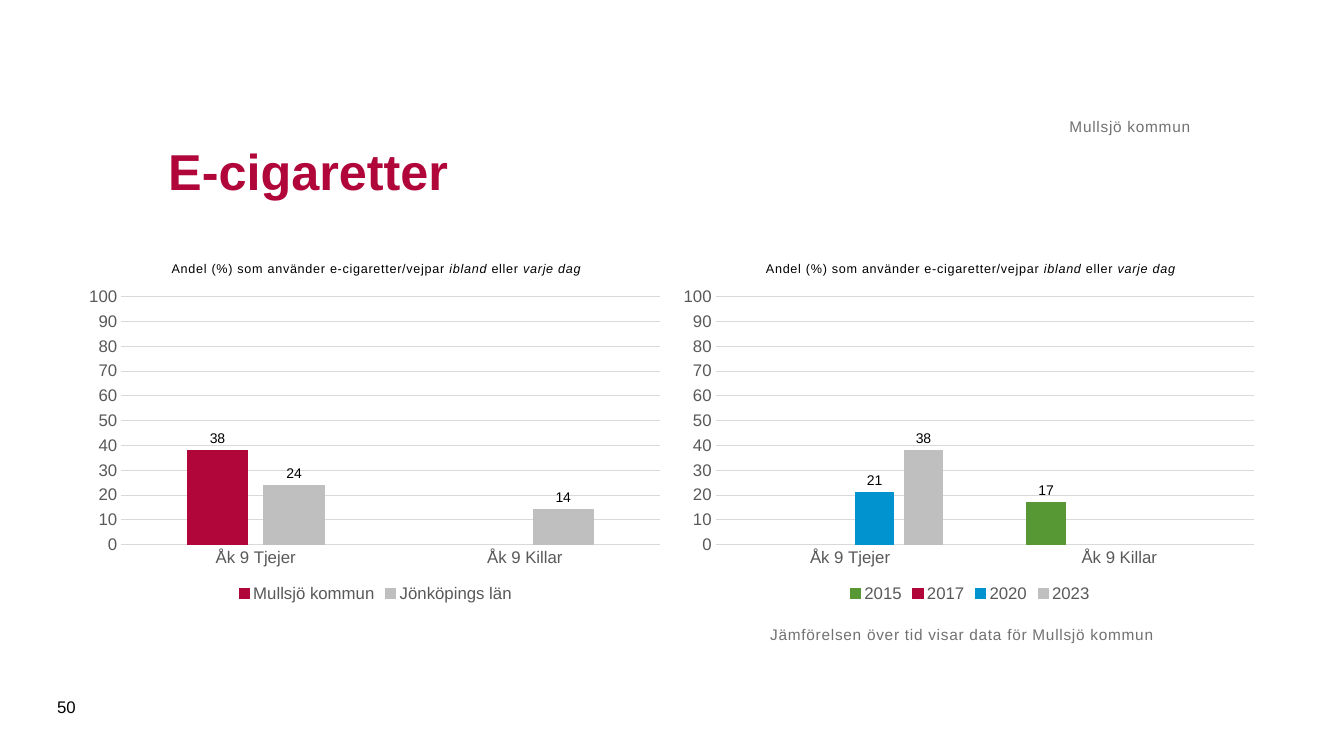
from dataclasses import dataclass, field
from typing import Any, Optional

from lxml.etree import SubElement
from pptx import Presentation
from pptx.chart.data import CategoryChartData as ChartData
from pptx.dml.color import RGBColor as Rgb
from pptx.enum.chart import XL_CHART_TYPE as ChartType
from pptx.enum.chart import XL_LABEL_POSITION as LabelPosition
from pptx.enum.chart import XL_LEGEND_POSITION as LegendPosition
from pptx.enum.chart import XL_TICK_MARK as TickMark
from pptx.enum.text import MSO_ANCHOR as Anchor
from pptx.enum.text import PP_ALIGN as Align
from pptx.oxml.ns import qn
from pptx.util import Cm, Pt


@dataclass(frozen=True)
class Theme:
    font: str = "Arial"
    black: str = "000000"
    crimson: str = "B1063A"
    silver: str = "BFBFBF"
    green: str = "579835"
    blue: str = "0093D0"
    axis_text: str = "595959"
    note_text: str = "717171"
    grid: str = "D9D9D9"
    heading_size: float = 36
    axis_size: float = 12
    note_size: float = 11
    value_size: float = 10
    question_size: float = 9
    spacing: str = "50"
    hairline: float = 0.75


@dataclass(frozen=True)
class Group:
    name: str
    shares: tuple[Optional[int], ...]
    color: str


@dataclass(frozen=True)
class Comparison:
    left: float
    groups: tuple[Group, ...]


@dataclass(frozen=True)
class Caption:
    text: str
    box: tuple[float, float, float, float]
    style: dict[str, Any] = field(default_factory=dict)


THEME = Theme()
PERCENT = "#,##0;#,##0"
GRADES = ("Åk 9 Tjejer", "Åk 9 Killar")
QUESTION = (
    ("Andel (%) som använder e-cigaretter/vejpar ", False),
    ("ibland", True),
    (" eller ", False),
    ("varje dag", True),
)
COMPARISONS = (
    Comparison(2.01, (
        Group("Mullsjö kommun", (38, None), THEME.crimson),
        Group("Jönköpings län", (24, 14), THEME.silver),
    )),
    Comparison(16.99, (
        Group("2015", (None, 17), THEME.green),
        Group("2017", (None, None), THEME.crimson),
        Group("2020", (21, None), THEME.blue),
        Group("2023", (38, None), THEME.silver),
    )),
)
NOTE = dict(size=THEME.note_size, color=THEME.note_text, spacing=THEME.spacing, flush=True)
CAPTIONS = (
    Caption("E-cigaretter", (3.99, 2.49, 26.01, 3.61),
            dict(size=THEME.heading_size, color=THEME.crimson, bold=True, anchor=Anchor.MIDDLE)),
    Caption("Jämförelsen över tid visar data för Mullsjö kommun", (19.41, 15.75, 13.49, 2.39), NOTE),
    Caption("Mullsjö kommun", (3.99, 1.57, 26.01, 1.85),
            dict(NOTE, anchor=Anchor.BOTTOM, align=Align.RIGHT)),
    Caption("50", (1.19, 17.3, 1.45, 1.02), dict(anchor=Anchor.MIDDLE)),
)


def set_font(font: Any, size: float, color: str, bold: bool = False, italic: bool = False) -> None:
    """Apply the theme typeface with the given size, colour and weight."""
    font.name, font.size = THEME.font, Pt(size)
    font.bold, font.italic = bold, italic
    font.color.rgb = Rgb.from_string(color)


def set_line(line: Any, color: str) -> None:
    """Draw a hairline in the given colour."""
    line.color.rgb = Rgb.from_string(color)
    line.width = Pt(THEME.hairline)


def add_text(slide: Any, text: str, box: tuple[float, float, float, float], *,
             size: float = THEME.axis_size, color: str = THEME.black, bold: bool = False,
             spacing: str = "0", flush: bool = False, anchor: Any = Anchor.TOP,
             align: Any = Align.LEFT) -> None:
    """Place one line of formatted text in a box."""
    frame = slide.shapes.add_textbox(*map(Cm, box)).text_frame
    frame.word_wrap, frame.vertical_anchor = True, anchor
    if flush:
        frame.margin_left = frame.margin_top = frame.margin_right = frame.margin_bottom = 0
    paragraph = frame.paragraphs[0]
    paragraph.alignment = align
    run = paragraph.add_run()
    run.text = text
    set_font(run.font, size, color, bold)
    run.font._element.set("spc", spacing)


def place_part(part: Any, index: int, **settings: Any) -> None:
    """Fix a chart part at fractions of the chart area."""
    for layout in part.findall(qn("c:layout")):
        part.remove(layout)
    layout = SubElement(part, qn("c:layout"))
    manual = SubElement(layout, qn("c:manualLayout"))
    for tag, value in settings.items():
        SubElement(manual, qn(f"c:{tag}")).set("val", str(value))
    part.insert(index, layout)


def add_question(chart: Any) -> None:
    """Write the survey question as the chart title."""
    title = chart.chart_title
    paragraph = title.text_frame.paragraphs[0]
    for text, italic in QUESTION:
        run = paragraph.add_run()
        run.text = text
        set_font(run.font, THEME.question_size, THEME.black, italic=italic)
        run.font._element.set("spc", THEME.spacing)
    place_part(title._element, 1, xMode="edge", yMode="edge", x=0.15, y=0.04)


def style_axes(chart: Any) -> None:
    """Set the percentage scale, gridlines and axis labels."""
    for axis in (chart.category_axis, chart.value_axis):
        axis.major_tick_mark = axis.minor_tick_mark = TickMark.NONE
        set_font(axis.tick_labels.font, THEME.axis_size, THEME.axis_text)
    set_line(chart.category_axis.format.line, THEME.grid)
    scale = chart.value_axis
    scale.minimum_scale, scale.maximum_scale, scale.major_unit = 0, 100, 10
    scale.tick_labels.number_format = PERCENT
    scale.tick_labels.number_format_is_linked = False
    scale.format.line.fill.background()
    set_line(scale.major_gridlines.format.line, THEME.grid)


def style_columns(plot: Any, groups: tuple[Group, ...]) -> None:
    """Colour each group's columns and label their values."""
    plot.gap_width, plot.overlap, plot.vary_by_categories = 219, -27, False
    for series, group in zip(plot.series, groups):
        series.format.fill.solid()
        series.format.fill.fore_color.rgb = Rgb.from_string(group.color)
        set_line(series.format.line, group.color)
        labels = series.data_labels
        labels.show_value, labels.position = True, LabelPosition.OUTSIDE_END
        labels.number_format, labels.number_format_is_linked = PERCENT, False
        set_font(labels.font, THEME.value_size, THEME.black)


def add_comparison(slide: Any, comparison: Comparison) -> None:
    """Draw one column chart with its question and legend."""
    data = ChartData(number_format=PERCENT)
    data.categories = GRADES
    for group in comparison.groups:
        data.add_series(group.name, group.shares)
    box = map(Cm, (comparison.left, 6.1, 14.91, 9.19))
    chart = slide.shapes.add_chart(ChartType.COLUMN_CLUSTERED, *box, data).chart
    set_font(chart.font, THEME.value_size, THEME.black)
    add_question(chart)
    style_axes(chart)
    style_columns(chart.plots[0], comparison.groups)
    chart.has_legend = True
    chart.legend.position = LegendPosition.BOTTOM
    chart.legend.include_in_layout = False
    set_font(chart.legend.font, THEME.axis_size, THEME.axis_text)
    place_part(chart._chartSpace.chart.plotArea, 0, layoutTarget="inner", xMode="edge",
               yMode="edge", x=0.07, y=0.15, w=0.91, h=0.68)


def main() -> None:
    """Build the e-cigarette slide and save it."""
    deck = Presentation()
    deck.slide_width, deck.slide_height = Cm(33.87), Cm(19.05)
    slide = deck.slides.add_slide(deck.slide_layouts[6])
    for comparison in COMPARISONS:
        add_comparison(slide, comparison)
    for caption in CAPTIONS:
        add_text(slide, caption.text, caption.box, **caption.style)
    deck.save("out.pptx")


if __name__ == "__main__":
    main()
